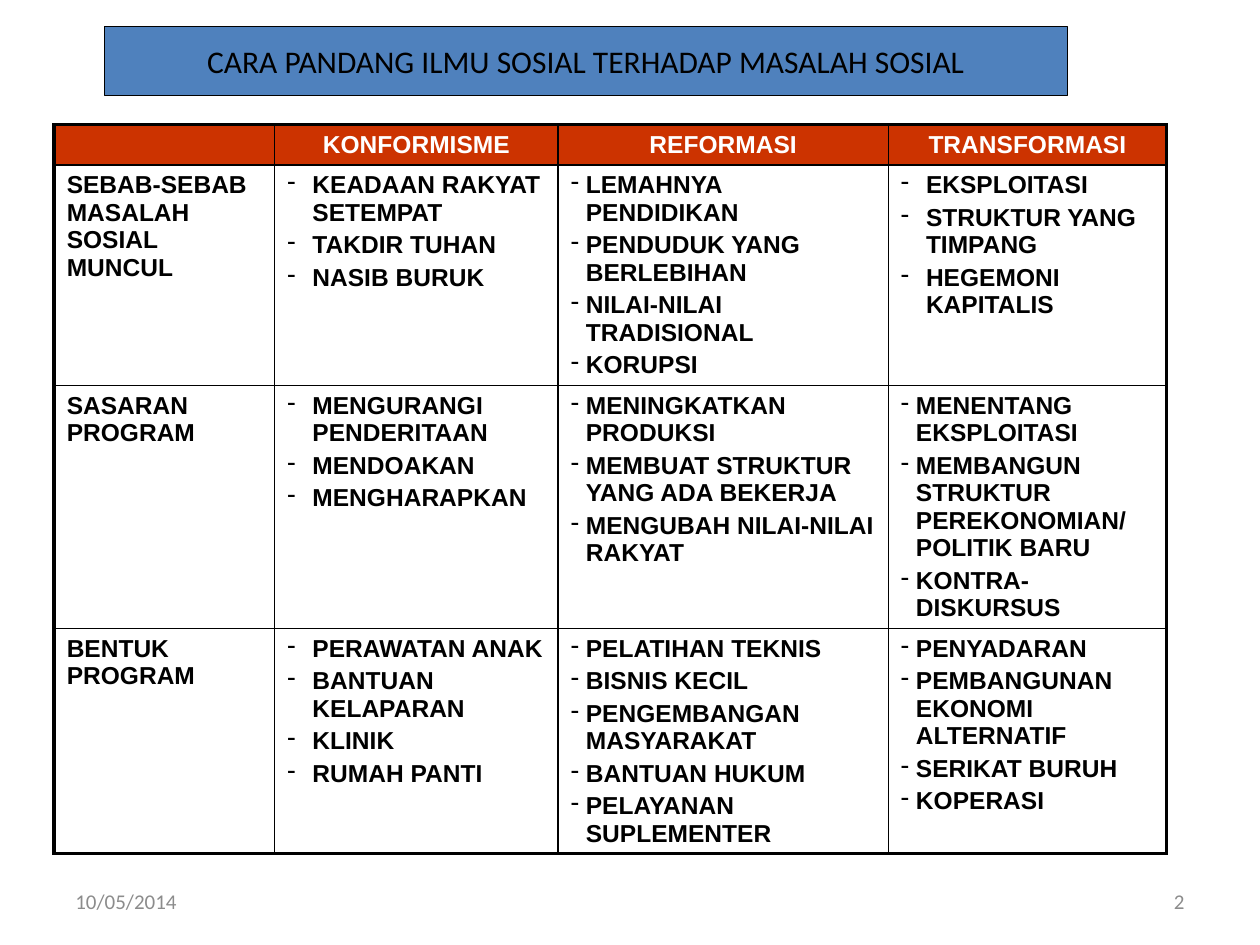
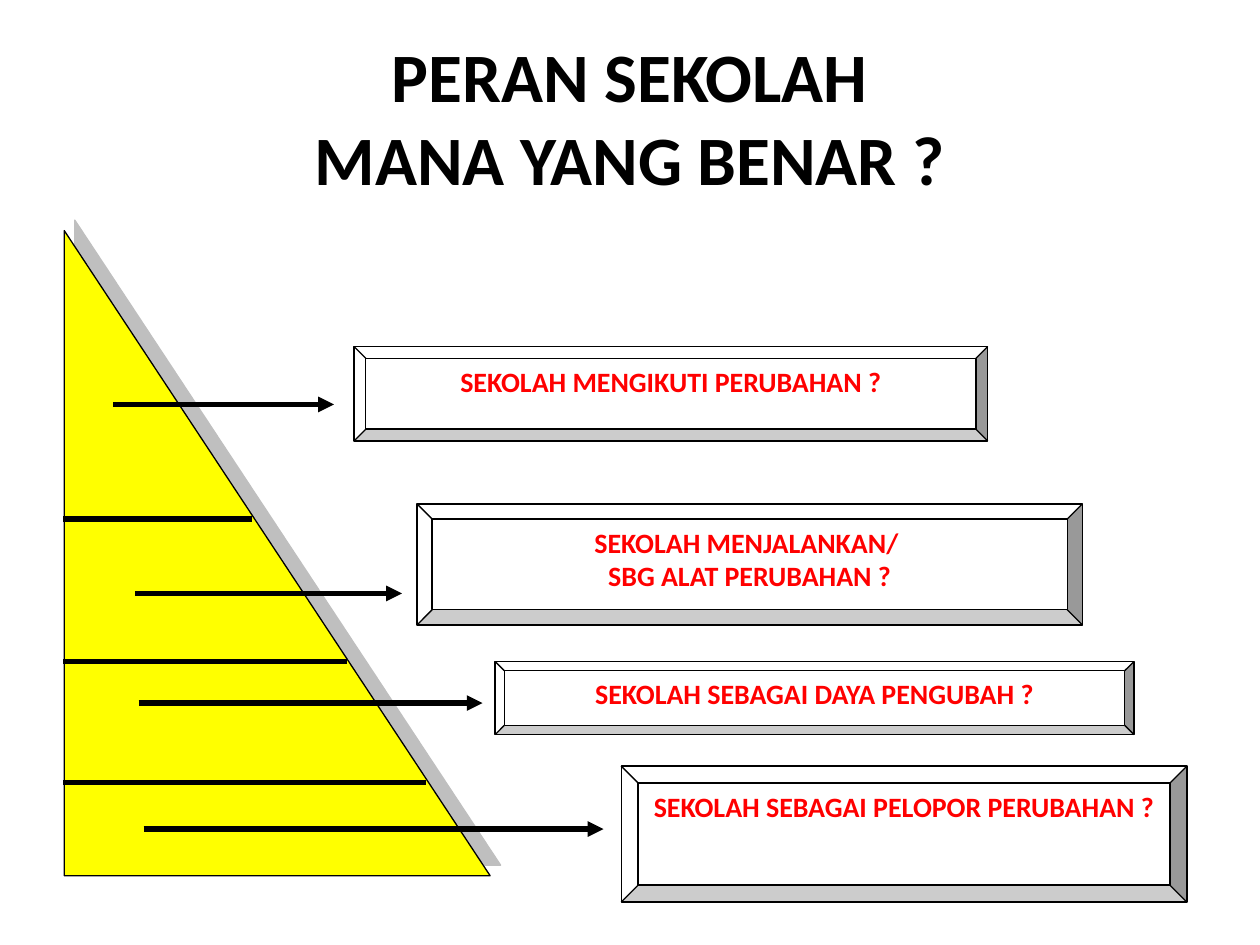
from pptx import Presentation
from pptx.dml.color import RGBColor
from pptx.enum.shapes import MSO_CONNECTOR, MSO_SHAPE
from pptx.enum.text import MSO_ANCHOR, MSO_AUTO_SIZE, PP_ALIGN
from pptx.oxml.ns import qn
from pptx.util import Inches, Pt
from lxml.etree import SubElement

BLACK = RGBColor(0, 0, 0)
WHITE = RGBColor(0xFF, 0xFF, 0xFF)
GRAY = RGBColor(0x8C, 0x8C, 0x8C)
BLUE = RGBColor(0x4F, 0x81, 0xBD)
BRICK = RGBColor(0xCC, 0x33, 0x00)
YELLOW = RGBColor(0xFF, 0xFF, 0x00)
RED = RGBColor(0xFF, 0, 0)

TITLE_ONLY = 5
WIDE, NARROW = 0.2, 0.12  # bullet indents in inches

HEADERS = ["", "KONFORMISME", "REFORMASI", "TRANSFORMASI"]
# Each row: label, then (bullet indent, items) for every approach
ROWS = [
    ("SEBAB-SEBAB MASALAH SOSIAL MUNCUL",
     (WIDE, ["KEADAAN RAKYAT SETEMPAT", "TAKDIR TUHAN", "NASIB BURUK"]),
     (NARROW, ["LEMAHNYA PENDIDIKAN", "PENDUDUK YANG BERLEBIHAN",
               "NILAI-NILAI TRADISIONAL", "KORUPSI"]),
     (WIDE, ["EKSPLOITASI", "STRUKTUR YANG TIMPANG", "HEGEMONI KAPITALIS"])),
    ("SASARAN PROGRAM",
     (WIDE, ["MENGURANGI PENDERITAAN", "MENDOAKAN", "MENGHARAPKAN"]),
     (NARROW, ["MENINGKATKAN PRODUKSI", "MEMBUAT STRUKTUR YANG ADA BEKERJA",
               "MENGUBAH NILAI-NILAI RAKYAT"]),
     (NARROW, ["MENENTANG EKSPLOITASI",
               "MEMBANGUN STRUKTUR PEREKONOMIAN/ POLITIK BARU",
               "KONTRA-DISKURSUS"])),
    ("BENTUK PROGRAM",
     (WIDE, ["PERAWATAN ANAK", "BANTUAN KELAPARAN", "KLINIK", "RUMAH PANTI"]),
     (NARROW, ["PELATIHAN TEKNIS", "BISNIS KECIL", "PENGEMBANGAN MASYARAKAT",
               "BANTUAN HUKUM", "PELAYANAN SUPLEMENTER"]),
     (NARROW, ["PENYADARAN", "PEMBANGUNAN EKONOMI ALTERNATIF",
               "SERIKAT BURUH", "KOPERASI"])),
]
COLUMN_WIDTHS = [1.75, 2.25, 2.62, 2.21]
ROW_HEIGHTS = [0.32, 1.75, 1.93, 1.78]

PYRAMID_LEFT = 0.5
DIVIDERS = [(2, 4.12), (2.75, 5.25), (3.38, 6.21)]  # right end, height
ARROWS = [(0.9, 2.65, 3.21), (1.07, 3.19, 4.71),
          (1.1, 3.83, 5.58), (1.14, 4.79, 6.58)]  # start, end, height
ROLES = [
    ((2.81, 2.75, 5.03, 0.75), ["SEKOLAH MENGIKUTI PERUBAHAN ?"]),
    ((3.31, 4, 5.28, 0.96), ["SEKOLAH MENJALANKAN/ ", "SBG ALAT PERUBAHAN ?"]),
    ((3.93, 5.25, 5.07, 0.58), ["SEKOLAH SEBAGAI DAYA PENGUBAH ?"]),
    ((4.93, 6.08, 4.49, 1.08), ["SEKOLAH SEBAGAI PELOPOR PERUBAHAN ?"]),
]


def style(para, size, color, bold=False, font="Calibri", align=PP_ALIGN.LEFT):
    para.alignment = align
    para.font.name = font
    para.font.size = Pt(size)
    para.font.bold = bold
    para.font.color.rgb = color


def paint(shape, fill):
    shape.fill.solid()
    shape.fill.fore_color.rgb = fill
    shape.line.color.rgb = BLACK
    shape.line.width = Pt(0.75)


def write_lines(frame, lines):
    """Put one paragraph per line into the frame and return them."""
    frame.text = lines[0]
    for line in lines[1:]:
        frame.add_paragraph().text = line
    return frame.paragraphs


def place_title(page, text, area, size, bold=False):
    title = page.shapes.title
    title.left, title.top, title.width, title.height = map(Inches, area)
    frame = title.text_frame
    frame.auto_size = MSO_AUTO_SIZE.NONE
    frame.vertical_anchor = MSO_ANCHOR.MIDDLE
    para = frame.paragraphs[0]
    para.text = text
    style(para, size, BLACK, bold, align=PP_ALIGN.CENTER)
    return title


def add_footer(page, text, left, align):
    box = page.shapes.add_textbox(
        Inches(left), Inches(6.95), Inches(2.33), Inches(0.4))
    frame = box.text_frame
    frame.word_wrap = True
    frame.vertical_anchor = MSO_ANCHOR.MIDDLE
    para = frame.paragraphs[0]
    para.text = text
    style(para, 12, GRAY, align=align)


# Table
def add_borders(cell, widths):
    """Draw black borders; widths are points for left, right, top, bottom."""
    properties = cell._tc.get_or_add_tcPr()
    for side, width in zip("LRTB", widths):
        line = SubElement(properties, qn(f"a:ln{side}"), w=str(Pt(width)))
        fill = SubElement(line, qn("a:solidFill"))
        SubElement(fill, qn("a:srgbClr"), val=str(BLACK))


def add_dash(para, indent):
    properties = para._p.get_or_add_pPr()
    properties.set("marL", str(Inches(indent)))
    properties.set("indent", str(-Inches(indent)))
    SubElement(properties, qn("a:buChar"), char="-")


def fill_cell(cell, lines, color=BLACK, align=PP_ALIGN.LEFT, indent=None):
    for para in write_lines(cell.text_frame, lines):
        para.space_before = Pt(2.8)
        if indent:
            add_dash(para, indent)
        style(para, 14, color, True, "Arial", align)


def add_approach_table(page):
    row_count, column_count = len(ROW_HEIGHTS), len(COLUMN_WIDTHS)
    table = page.shapes.add_table(
        row_count, column_count, Inches(0.43), Inches(0.99),
        Inches(sum(COLUMN_WIDTHS)), Inches(sum(ROW_HEIGHTS))).table
    table.first_row = table.horz_banding = False
    for column, width in zip(table.columns, COLUMN_WIDTHS):
        column.width = Inches(width)
    for row, height in zip(table.rows, ROW_HEIGHTS):
        row.height = Inches(height)

    # Thick frame outside, thin lines inside
    for r in range(row_count):
        for c in range(column_count):
            on_edge = (c == 0, c == column_count - 1, r == 0, r == row_count - 1)
            cell = table.cell(r, c)
            add_borders(cell, [2.25 if edge else 1 for edge in on_edge])
            if r:
                cell.fill.background()

    for c, header in enumerate(HEADERS):
        cell = table.cell(0, c)
        cell.fill.solid()
        cell.fill.fore_color.rgb = BRICK
        cell.vertical_anchor = MSO_ANCHOR.MIDDLE
        cell.margin_top = cell.margin_bottom = 0
        fill_cell(cell, [header], WHITE, PP_ALIGN.CENTER)
    for r, (label, *approaches) in enumerate(ROWS, 1):
        fill_cell(table.cell(r, 0), [label])
        for c, (indent, items) in enumerate(approaches, 1):
            fill_cell(table.cell(r, c), items, indent=indent)


# Pyramid diagram
def add_pyramid(page):
    pyramid = page.shapes.add_shape(
        MSO_SHAPE.RIGHT_TRIANGLE,
        Inches(0.51), Inches(1.83), Inches(3.38), Inches(5.12))
    paint(pyramid, YELLOW)
    effects = SubElement(pyramid._element.spPr, qn("a:effectLst"))
    shadow = SubElement(effects, qn("a:outerShdw"), blurRad="0",
                        dist=str(Pt(8.5)), dir=str(315 * 60000),
                        algn="ctr", rotWithShape="0")
    color = SubElement(shadow, qn("a:srgbClr"), val="808080")
    SubElement(color, qn("a:alpha"), val="50000")


def add_level_line(page, start, end, height, arrow=False):
    line = page.shapes.add_connector(
        MSO_CONNECTOR.STRAIGHT,
        Inches(start), Inches(height), Inches(end), Inches(height))
    line.line.color.rgb = BLACK
    line.line.width = Pt(3)
    if arrow:
        SubElement(line.line._get_or_add_ln(), qn("a:tailEnd"), type="triangle")
    SubElement(line._element.spPr, qn("a:effectLst"))


def add_role_box(page, area, lines):
    box = page.shapes.add_shape(MSO_SHAPE.BEVEL, *map(Inches, area))
    box.shadow.inherit = False
    paint(box, WHITE)
    frame = box.text_frame
    frame.word_wrap = True
    frame.vertical_anchor = MSO_ANCHOR.TOP
    for para in write_lines(frame, lines):
        style(para, 16, RED, True, align=PP_ALIGN.CENTER)


def build_approach_page(deck):
    page = deck.slides.add_slide(deck.slide_layouts[TITLE_ONLY])
    title = place_title(page, "CARA PANDANG ILMU SOSIAL TERHADAP MASALAH SOSIAL",
                        (0.83, 0.21, 7.64, 0.55), 18)
    paint(title, BLUE)
    add_approach_table(page)
    add_footer(page, "10/05/2014", 0.5, PP_ALIGN.LEFT)
    add_footer(page, "2", 7.17, PP_ALIGN.RIGHT)


def build_role_page(deck):
    page = deck.slides.add_slide(deck.slide_layouts[TITLE_ONLY])
    place_title(page, "PERAN SEKOLAH\vMANA YANG BENAR ?",
                (0.5, 0.42, 9, 1), 39.6, bold=True)
    add_pyramid(page)
    for end, height in DIVIDERS:
        add_level_line(page, PYRAMID_LEFT, end, height)
    for start, end, height in ARROWS:
        add_level_line(page, start, end, height, arrow=True)
    for area, lines in ROLES:
        add_role_box(page, area, lines)


def main():
    deck = Presentation()
    deck.slide_width, deck.slide_height = Inches(10), Inches(7.5)
    build_approach_page(deck)
    build_role_page(deck)
    deck.save("out.pptx")


if __name__ == "__main__":
    main()
